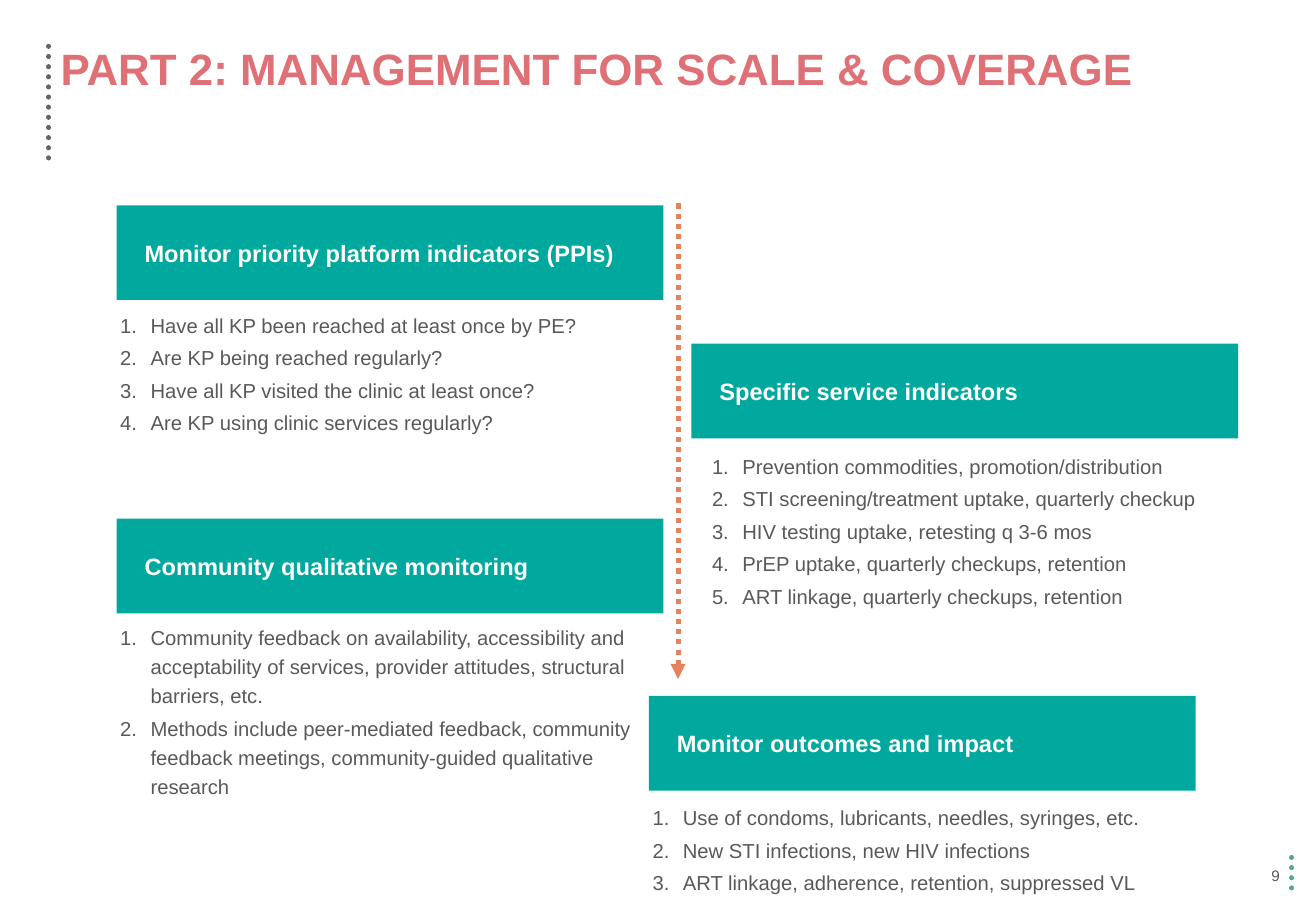
from lxml import etree
from pptx import Presentation
from pptx.dml.color import RGBColor
from pptx.enum.dml import MSO_LINE
from pptx.enum.shapes import MSO_CONNECTOR, MSO_SHAPE
from pptx.enum.text import MSO_ANCHOR, PP_ALIGN
from pptx.oxml.ns import qn
from pptx.util import Inches, Pt

RECTANGLE = MSO_SHAPE.RECTANGLE
STRAIGHT = MSO_CONNECTOR.STRAIGHT
MIDDLE = MSO_ANCHOR.MIDDLE
LEFT, RIGHT = PP_ALIGN.LEFT, PP_ALIGN.RIGHT
DOTTED = MSO_LINE.ROUND_DOT

FONT = "Arial"
TEAL, CORAL, ORANGE = "00A89D", "DF7076", "E5825E"
GREY, DARK_GREY, GREEN, WHITE = "585958", "636462", "4FA699", "FFFFFF"

TITLE = "PART 2: MANAGEMENT FOR SCALE & COVERAGE"
PAGE_NUMBER = "9"

BAR_WIDTH, BAR_HEIGHT = 4.5, 0.78
BAR_INDENT = 0.23
LIST_INSET, NUMBER_INDENT = 0.03, 0.25

# heading, bar (left, top), list (left, top, width, height), items
SECTIONS = [
    ("Monitor priority platform indicators (PPIs)",
     (0.96, 1.69), (0.96, 2.51, 3.86, 1.1),
     ["Have all KP been reached at least once by PE?",
      "Are KP being reached regularly?",
      "Have all KP visited the clinic at least once?",
      "Are KP using clinic services regularly?"]),
    ("Community qualitative monitoring",
     (0.96, 4.27), (0.96, 5.08, 4.36, 1.52),
     ["Community feedback on availability, accessibility and acceptability "
      "of services, provider attitudes, structural barriers, etc.",
      "Methods include peer-mediated feedback, community feedback meetings, "
      "community-guided qualitative research"]),
    ("Monitor outcomes and impact",
     (5.34, 5.73), (5.34, 6.57, 4.19, 0.82),
     ["Use of condoms, lubricants, needles, syringes, etc.",
      "New STI infections, new HIV infections",
      "ART linkage, adherence, retention, suppressed VL"]),
    ("Specific service indicators",
     (5.69, 2.83), (5.83, 3.67, 4.14, 1.37),
     ["Prevention commodities, promotion/distribution",
      "STI screening/treatment uptake, quarterly checkup",
      "HIV testing uptake, retesting q 3-6 mos",
      "PrEP uptake, quarterly checkups, retention",
      "ART linkage, quarterly checkups, retention"]),
]

# x, start y, end y, colour, cap, arrowhead at the start
DOTTED_LINES = [
    (10.63, 7.31, 7.03, GREEN, "rnd", False),
    (0.4, 1.3, 0.37, DARK_GREY, "rnd", False),
    (5.58, 5.59, 1.67, ORANGE, "flat", True),
]


def color(value):
    return RGBColor.from_string(value)


def add_run(paragraph, text, size, fill, bold=False):
    run = paragraph.add_run()
    run.text = text
    run.font.name = FONT
    run.font.size = Pt(size)
    run.font.bold = bold
    run.font.color.rgb = color(fill)


def prepare_frame(shape, left_inset, right_inset, vertical_inset):
    frame = shape.text_frame
    frame.word_wrap = True
    frame.vertical_anchor = MIDDLE
    frame.margin_left, frame.margin_right = Inches(left_inset), Inches(right_inset)
    frame.margin_top = frame.margin_bottom = Inches(vertical_inset)
    return frame


def add_text_box(slide, box, inset=(0.1, 0.1, 0.05)):
    shape = slide.shapes.add_textbox(*map(Inches, box))
    return prepare_frame(shape, *inset)


def add_dotted_line(slide, x, start, end, fill, cap, arrow):
    line = slide.shapes.add_connector(
        STRAIGHT, Inches(x), Inches(start), Inches(x), Inches(end))
    line.line.color.rgb = color(fill)
    line.line.width = Pt(3)
    line.line.dash_style = DOTTED
    properties = line._element.spPr
    outline = properties.find(qn("a:ln"))
    outline.set("cap", cap)
    if arrow:
        etree.SubElement(outline, qn("a:headEnd"), type="triangle")
    etree.SubElement(properties, qn("a:effectLst"))


def add_bar(slide, heading, left, top):
    bar = slide.shapes.add_shape(
        RECTANGLE, *map(Inches, (left, top, BAR_WIDTH, BAR_HEIGHT)))
    bar.shadow.inherit = False
    bar.fill.solid()
    bar.fill.fore_color.rgb = color(TEAL)
    bar.line.fill.background()
    paragraph = prepare_frame(bar, BAR_INDENT, LIST_INSET, LIST_INSET).paragraphs[0]
    paragraph.alignment = LEFT
    add_run(paragraph, heading, 14, WHITE, bold=True)


def add_numbered_list(slide, box, items):
    frame = add_text_box(slide, box, (LIST_INSET,) * 3)
    for index, item in enumerate(items):
        paragraph = frame.add_paragraph() if index else frame.paragraphs[0]
        properties = paragraph._p.get_or_add_pPr()
        properties.set("marL", str(Inches(NUMBER_INDENT)))
        properties.set("indent", str(-Inches(NUMBER_INDENT)))
        etree.SubElement(properties, qn("a:buFont"), typeface=FONT)
        etree.SubElement(properties, qn("a:buAutoNum"), type="arabicPeriod")
        paragraph.line_spacing = 1.2
        if index:
            paragraph.space_before = Pt(2)
        add_run(paragraph, item, 12, GREY)


def main():
    presentation = Presentation()
    presentation.slide_width = Inches(10.83)
    presentation.slide_height = Inches(7.5)
    slide = presentation.slides.add_slide(presentation.slide_layouts[6])

    for line in DOTTED_LINES:
        add_dotted_line(slide, *line)

    title = add_text_box(slide, (0.4, 0.12, 10.03, 0.94)).paragraphs[0]
    title.line_spacing = 0.9
    add_run(title, TITLE, 26, CORAL, bold=True)

    number = add_text_box(slide, (9.13, 7.01, 1.5, 0.4)).paragraphs[0]
    number.alignment = RIGHT
    add_run(number, PAGE_NUMBER, 9, GREY)

    for heading, bar_corner, list_box, items in SECTIONS:
        add_bar(slide, heading, *bar_corner)
        add_numbered_list(slide, list_box, items)

    presentation.save("out.pptx")


if __name__ == "__main__":
    main()
